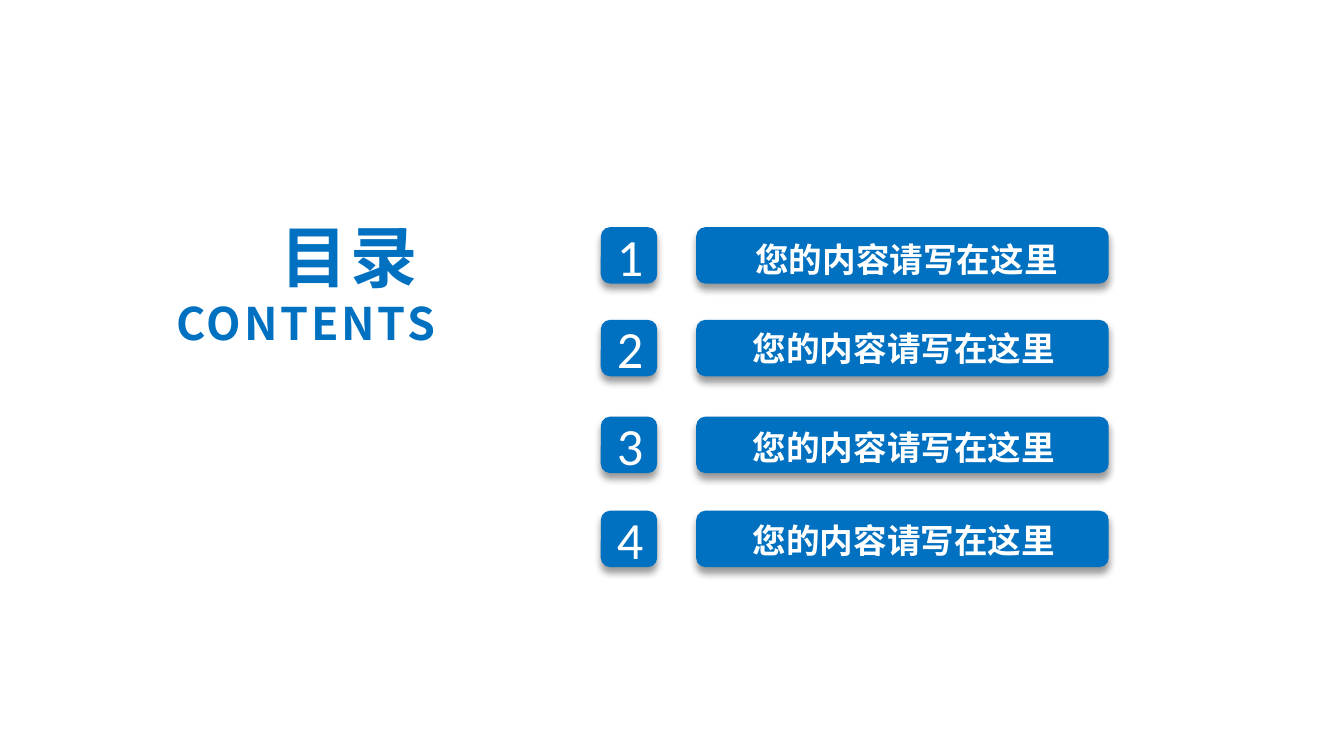
from lxml.etree import SubElement
from pptx import Presentation
from pptx.dml.color import RGBColor
from pptx.enum.shapes import MSO_SHAPE
from pptx.enum.text import MSO_ANCHOR, MSO_AUTO_SIZE, PP_ALIGN
from pptx.oxml.ns import qn
from pptx.util import Inches, Pt

COLORS = {"blue": "0070C0", "white": "FFFFFF", "shadow": "000000"}
CJK_FONT = "Noto Sans CJK SC"
NUMBER_FONT = "Calibri"
ENTRY = "您的内容请写在这里"
# Top of each row, then left and top of its label relative to the bar
ROWS = [(1.69, 0.31, 0.02), (2.38, 0.29, -0.01), (3.1, 0.29, 0.01), (3.8, 0.29, 0)]


def format_runs(paragraph, size, font_name, color, bold=False, spacing=None):
    for run in paragraph.runs:
        run.font.size = Pt(size)
        run.font.bold = bold
        run.font.color.rgb = RGBColor.from_string(COLORS[color])
        run.font.name = font_name
        properties = run.font._element
        SubElement(properties, qn("a:ea"), typeface=font_name)
        if spacing:
            properties.set("spc", str(int(spacing * 100)))


def set_insets(frame, horizontal, vertical):
    frame.margin_left = frame.margin_right = Inches(horizontal)
    frame.margin_top = frame.margin_bottom = Inches(vertical)


def add_shadow(shape):
    """Cast a soft shadow straight down."""
    shape.shadow.inherit = False
    effects = shape._element.spPr.find(qn("a:effectLst"))
    shadow = SubElement(effects, qn("a:outerShdw"), blurRad=str(Pt(4)),
                        dist=str(Pt(3)), dir="5400000", rotWithShape="0")
    color = SubElement(shadow, qn("a:srgbClr"), val=COLORS["shadow"])
    SubElement(color, qn("a:alpha"), val="40000")


def add_tile(slide, left, top, width, height):
    tile = slide.shapes.add_shape(MSO_SHAPE.ROUNDED_RECTANGLE, Inches(left),
                                  Inches(top), Inches(width), Inches(height))
    tile.fill.solid()
    tile.fill.fore_color.rgb = RGBColor.from_string(COLORS["blue"])
    tile.line.fill.background()
    add_shadow(tile)
    return tile


def add_heading(slide, left, top, width, height):
    title = slide.shapes.title
    title.left, title.top = Inches(left), Inches(top)
    title.width, title.height = Inches(width), Inches(height)
    frame = title.text_frame
    frame.text = "目录 \nCONTENTS"
    frame.word_wrap = True
    frame.auto_size = MSO_AUTO_SIZE.SHAPE_TO_FIT_TEXT
    frame.vertical_anchor = MSO_ANCHOR.TOP
    set_insets(frame, 0.1, 0.05)
    for paragraph, size in zip(frame.paragraphs, (36, 24)):
        paragraph.alignment = PP_ALIGN.RIGHT
        format_runs(paragraph, size, CJK_FONT, "blue", bold=True, spacing=1.5)


def add_entry(slide, number, left, top, label_dx, label_dy):
    """Add one contents row: number tile, bar and label."""
    size, bar_left = 0.42, left + 0.71
    number_tile = add_tile(slide, left, top, size, size)
    frame = number_tile.text_frame
    frame.text = str(number)
    frame.vertical_anchor = MSO_ANCHOR.MIDDLE
    set_insets(frame, 0.1, 0.05)
    frame.paragraphs[0].alignment = PP_ALIGN.CENTER
    format_runs(frame.paragraphs[0], 28, NUMBER_FONT, "white")

    add_tile(slide, bar_left, top, 3.07, size)
    label = slide.shapes.add_textbox(Inches(bar_left + label_dx), Inches(top + label_dy),
                                     Inches(2.58), Inches(0.44))
    frame = label.text_frame
    frame.text = ENTRY
    frame.word_wrap = True
    frame.auto_size = MSO_AUTO_SIZE.SHAPE_TO_FIT_TEXT
    set_insets(frame, 0.13, 0.07)
    format_runs(frame.paragraphs[0], 18, CJK_FONT, "white", bold=True)


def main():
    presentation = Presentation()
    presentation.slide_width = Inches(10)
    presentation.slide_height = Inches(10 * 9 / 16)
    slide = presentation.slides.add_slide(presentation.slide_layouts[5])
    add_heading(slide, 1.04, 1.55, 2.3, 1.11)
    for number, (top, label_dx, label_dy) in enumerate(ROWS, start=1):
        add_entry(slide, number, 4.47, top, label_dx, label_dy)
    presentation.save("out.pptx")


if __name__ == "__main__":
    main()
